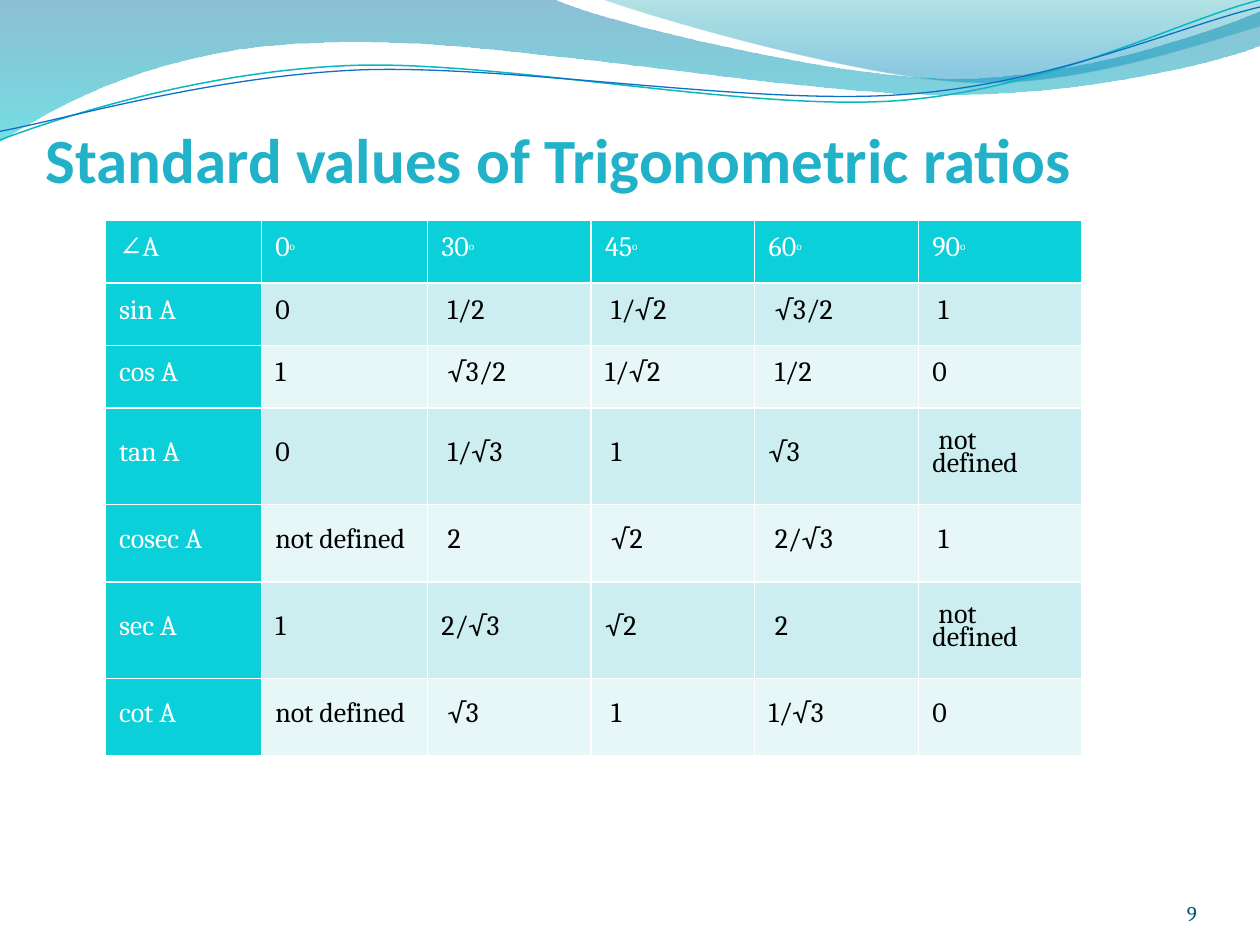
from lxml.etree import SubElement as Sub
from pptx import Presentation as Deck
from pptx.dml.color import RGBColor as Rgb
from pptx.enum.text import MSO_ANCHOR as Anchor, MSO_AUTO_SIZE as Auto, PP_ALIGN as Align
from pptx.oxml.ns import qn
from pptx.util import Pt

TITLE = "Standard values of Trigonometric ratios"
PAGE = "9"
HEAD = ["∠A", "0", "30", "45", "60", "90"]
ROWS = [
    ["sin A", "0", " 1/2", " 1/√2", " √3/2", " 1"],
    ["cos A", "1", " √3/2", "1/√2", " 1/2", "0"],
    ["tan A", "0", " 1/√3", " 1", "√3", " not defined"],
    ["cosec A", "not defined", " 2", " √2", " 2/√3", " 1"],
    ["sec A", "1", "2/√3", "√2", " 2", " not defined"],
    ["cot A", "not defined", " √3", " 1", "1/√3", "0"],
]
WIDTHS = [89.3, 95] + [93.5] * 4
HEIGHTS = [35.7] * 3 + [55.2, 44.3] * 2
HARD = chr(160)

THEME = dict(
    title="21B2C9", page="045D75", head="0BD0D9", odd="CCEEF1", even="E7F7F8",
    light="FFFFFF", dark="000000", big=36, body=16, tiny=11, small=12,
    sans="Calibri", serif="Cambria",
)

WAVES = [
    dict(start=(0, 0), steps=[
        (317, 0), (343, 12, 478, 45, 546, 45), (614, 45, 690, 19, 720, 6.5),
        (720, 26), (708, 32, 626, 55, 537, 54), (448, 54, 275, 20, 185, 24.5),
        (93, 26, 33, 60, 0, 81)],
        stops=[(0, "0074A1", 45), (1, "00C6CF", 55)]),
    dict(start=(345, 0), steps=[
        (366, 8, 491, 45, 554, 47), (616, 50, 692, 23, 720, 15), (720, 0)],
        stops=[(0, "00A1A9", 30), (0.8, "008BBF", 45)]),
    dict(start=(0, 80), steps=[
        (34.5, 67, 114, 41, 199.5, 37.5), (284.5, 34, 427, 64, 513.5, 57.5),
        (600, 51, 675.5, 11, 720, 0)],
        line=("0AB8BF", 0.85)),
    dict(start=(0, 75), steps=[
        (34, 69, 118, 44, 204, 40), (290, 36.5, 430, 60.5, 516, 54),
        (602, 48, 673.5, 15, 720, 4)],
        line=("0F6FC6", 0.75)),
]


def tint(name):
    return Rgb.from_string(THEME.get(name, name))


def put(frame, text, size="body", font="serif", color="dark", bold=False,
        align=Align.LEFT, lead=None, sup=""):
    para = frame.paragraphs[0]
    para.alignment = align
    if lead:
        para.line_spacing = Pt(lead)
    if text[0].isspace():
        text = HARD + text[1:]
    for part, scale, base in ((text, size, 0), (sup, "tiny", 30000)):
        if not part:
            continue
        run = para.add_run()
        run.text = part
        run.font.size = Pt(THEME[scale])
        run.font.name = THEME[font]
        run.font.bold = bold
        run.font.color.rgb = tint(color)
        if base:
            run.font._element.set("baseline", str(base))


def bend(shape, steps):
    lines = iter(list(shape._element.iter(qn("a:lnTo"))))
    for step in steps:
        node = next(lines)
        if len(step) == 6:
            node.tag = qn("a:cubicBezTo")
            for _ in range(2):
                extra = next(lines)
                node.append(extra[0])
                extra.getparent().remove(extra)


def wave(slide, start, steps, stops=None, line=None):
    spots = [(Pt(s[i]), Pt(s[i + 1])) for s in steps for i in range(0, len(s), 2)]
    pen = slide.shapes.build_freeform(Pt(start[0]), Pt(start[1]))
    pen.add_line_segments(spots, close=False)
    shape = pen.convert_to_shape()
    bend(shape, steps)
    shape.shadow.inherit = False
    if line:
        shape.fill.background()
        shape.line.color.rgb = tint(line[0])
        shape.line.width = Pt(line[1])
        return
    Sub(next(shape._element.iter(qn("a:path"))), qn("a:close"))
    shape.line.fill.background()
    shape.fill.gradient()
    shape.fill.gradient_angle = 270
    for stop, (place, color, _) in zip(shape.fill.gradient_stops, stops):
        stop.position = place
        stop.color.rgb = tint(color)
    for node, (_, _, alpha) in zip(shape._element.spPr.iter(qn("a:srgbClr")), stops):
        Sub(node, qn("a:alpha"), val=str(alpha * 1000))


def edge(cell):
    props = cell._tc.get_or_add_tcPr()
    for i, side in enumerate(("lnL", "lnR", "lnT", "lnB")):
        line = Sub(props, qn("a:" + side), w=str(Pt(1)))
        props.insert(i, line)
        Sub(Sub(line, qn("a:solidFill")), qn("a:srgbClr"), val=THEME["light"])


def grid(slide):
    data = [HEAD] + ROWS
    table = slide.shapes.add_table(len(data), len(HEAD), Pt(60), Pt(126),
                                   Pt(sum(WIDTHS)), Pt(sum(HEIGHTS))).table
    table.first_row = table.horz_banding = False
    for col, width in zip(table.columns, WIDTHS):
        col.width = Pt(width)
    for r, (row, high) in enumerate(zip(data, HEIGHTS)):
        table.rows[r].height = Pt(high)
        for c, text in enumerate(row):
            cell = table.cell(r, c)
            key = r == 0 or c == 0
            cell.fill.solid()
            cell.fill.fore_color.rgb = tint("head" if key else "odd" if r % 2 else "even")
            cell.vertical_anchor = Anchor.MIDDLE
            cell.margin_left = cell.margin_right = Pt(8)
            cell.margin_top = cell.margin_bottom = Pt(5.8)
            put(cell.text_frame, text, color="light" if key else "dark", lead=13.5,
                sup="o" if r == 0 and c else "")
            edge(cell)


def place(shape, left, top, width, height, anchor):
    shape.left, shape.top = Pt(left), Pt(top)
    shape.width, shape.height = Pt(width), Pt(height)
    frame = shape.text_frame
    frame.word_wrap = True
    frame.auto_size = Auto.NONE
    frame.vertical_anchor = anchor
    return frame


def main():
    deck = Deck()
    deck.slide_width, deck.slide_height = Pt(720), Pt(540)
    slide = deck.slides.add_slide(deck.slide_layouts[5])
    for item in WAVES:
        wave(slide, **item)
    grid(slide)
    frame = place(slide.shapes.title, 19, 65, 690, 51, Anchor.MIDDLE)
    put(frame, TITLE, size="big", font="sans", color="title", bold=True)
    box = slide.shapes.add_textbox(0, 0, 0, 0)
    frame = place(box, 624, 500.5, 60, 28.7, Anchor.BOTTOM)
    frame.margin_left = frame.margin_right = frame.margin_top = frame.margin_bottom = 0
    put(frame, PAGE, size="small", color="page", align=Align.RIGHT)
    deck.save("out.pptx")


if __name__ == "__main__":
    main()
